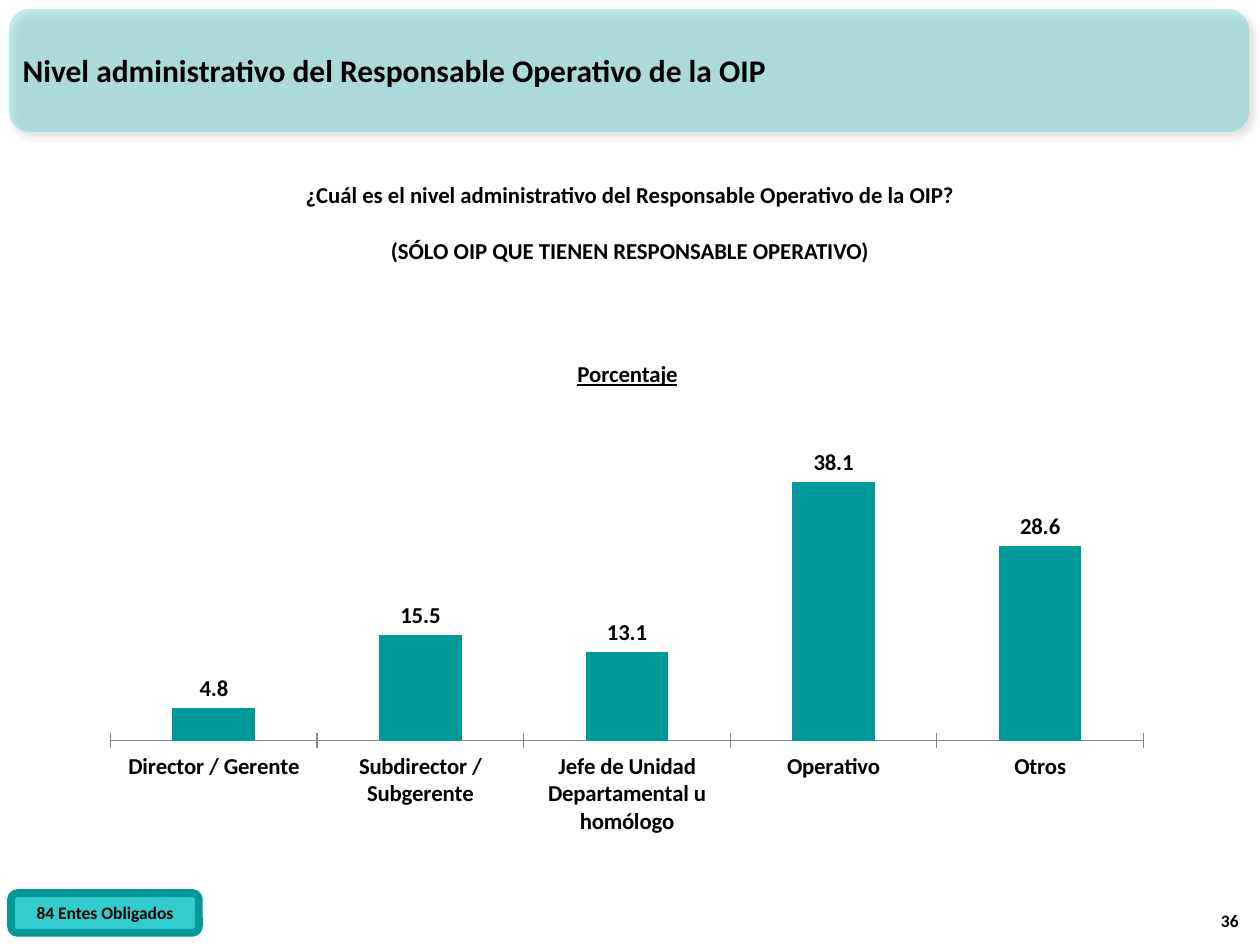
import pptx
import pptx.chart.data
import pptx.dml.color
import pptx.enum.chart
import pptx.enum.shapes
import pptx.enum.text
import pptx.oxml
import pptx.oxml.ns
import pptx.util

RGBColor = pptx.dml.color.RGBColor
PP_ALIGN = pptx.enum.text.PP_ALIGN
MSO_ANCHOR = pptx.enum.text.MSO_ANCHOR
Pt = pptx.util.Pt

BLACK = RGBColor(0x00, 0x00, 0x00)
TEAL = RGBColor(0x00, 0x99, 0x99)
TURQUOISE = RGBColor(0x33, 0xCC, 0xCC)
GRAY = RGBColor(0x86, 0x86, 0x86)
FONT = "Calibri"
PX_PER_INCH = 126

LEVELS = [
    ("Director / Gerente", 4.8),
    ("Subdirector / Subgerente", 15.5),
    ("Jefe de Unidad Departamental u homólogo", 13.1),
    ("Operativo", 38.1),
    ("Otros", 28.6),
]


def px(*lengths):
    return [round(n * 914400 / PX_PER_INCH) for n in lengths]


def xml(tag, body="", attrs=""):
    prefix = tag.split(":")[0]
    ns = pptx.oxml.ns.nsdecls(*{prefix, "a"})
    return pptx.oxml.parse_xml(f"<{tag} {ns} {attrs}>{body}</{tag}>")


def style_font(font, size):
    font.name = FONT
    font.size = Pt(size)
    font.bold = True
    font.color.rgb = BLACK


def write(sp, lines, size, align, anchor, gap=0):
    tf = sp.text_frame
    tf.word_wrap = True
    tf.auto_size = pptx.enum.text.MSO_AUTO_SIZE.NONE
    tf.vertical_anchor = anchor
    tf.text = "\n".join(lines)
    for i, p in enumerate(tf.paragraphs):
        p.alignment = align
        p.space_before = Pt(gap if i else 0)
        for r in p.runs:
            style_font(r.font, size)


def add_text(s, box, lines, size, align, anchor, gap=0):
    write(s.shapes.add_textbox(*px(*box)), lines, size, align, anchor, gap)


def add_round_box(s, box, color):
    shape = pptx.enum.shapes.MSO_SHAPE.ROUNDED_RECTANGLE
    sp = s.shapes.add_shape(shape, *px(*box))
    sp.shadow.inherit = False
    sp.fill.solid()
    sp.fill.fore_color.rgb = color
    sp.line.fill.background()
    return sp


def add_title(s, text):
    title = s.shapes.title
    title.left, title.top, title.width, title.height = px(10, 11, 1171, 118)
    write(title, [text], 18, PP_ALIGN.LEFT, MSO_ANCHOR.MIDDLE)

    # Translucent panel with a shadow, behind the title
    panel = add_round_box(s, (9, 9, 1240, 123), TURQUOISE)
    spPr = panel._element.spPr
    spPr.find(".//" + pptx.oxml.ns.qn("a:srgbClr")).append(
        xml("a:alpha", attrs='val="30000"'))
    spPr.find(pptx.oxml.ns.qn("a:effectLst")).append(xml(
        "a:outerShdw",
        '<a:srgbClr val="000000"><a:alpha val="40000"/></a:srgbClr>',
        'blurRad="50800" dist="38100" dir="2700000" algn="tl" rotWithShape="0"'))
    title._element.addprevious(panel._element)


def set_layout(element, **parts):
    """Place a chart part by fractions of the chart area."""
    layout = element.get_or_add_layout() if hasattr(
        element, "get_or_add_layout") else element.find(pptx.oxml.ns.qn("c:layout"))
    if layout is None:
        layout = xml("c:layout")
        element.insert(0, layout)
    target = '<c:layoutTarget val="inner"/>' if "w" in parts else ""
    modes = "".join(f'<c:{k}Mode val="edge"/>' for k in "xy")
    values = "".join(f'<c:{k} val="{v}"/>' for k, v in parts.items())
    layout.append(xml("c:manualLayout", target + modes + values))


def add_level_chart(s):
    data = pptx.chart.data.CategoryChartData(number_format="#,##0.0")
    data.categories = [name for name, _ in LEVELS]
    data.add_series("Porcentaje", [value for _, value in LEVELS])
    kind = pptx.enum.chart.XL_CHART_TYPE.COLUMN_CLUSTERED
    chart = s.shapes.add_chart(kind, *px(89, 334, 1076, 515), data).chart
    style_font(chart.font, 13)
    chart.has_legend = False

    # Title
    chart.has_title = True
    tf = chart.chart_title.text_frame
    tf.text = "Porcentaje"
    font = tf.paragraphs[0].runs[0].font
    style_font(font, 13)
    font.underline = True
    chart.chart_title.include_in_layout = False
    set_layout(chart.chart_title._element, x=0.45, y=0.04)

    # Axes
    val = chart.value_axis
    val.minimum_scale, val.maximum_scale, val.major_unit = 0, 50, 10
    val.has_major_gridlines = False
    val.visible = False
    cat = chart.category_axis
    cat.major_tick_mark = pptx.enum.chart.XL_TICK_MARK.CROSS
    cat.format.line.color.rgb = GRAY

    # Columns and labels
    plot = chart.plots[0]
    plot.vary_by_categories = False
    plot.gap_width, plot.overlap = 150, -25
    fill = plot.series[0].format.fill
    fill.solid()
    fill.fore_color.rgb = TEAL
    plot.has_data_labels = True
    labels = plot.data_labels
    labels.show_value = True
    labels.number_format = "#,##0.0"
    labels.number_format_is_linked = False
    labels.position = pptx.enum.chart.XL_LABEL_POSITION.OUTSIDE_END
    style_font(labels.font, 13)
    set_layout(chart._chartSpace.chart.plotArea, x=0.02, y=0.13, w=0.96, h=0.66)


def main():
    prs = pptx.Presentation()
    prs.slide_width, prs.slide_height = px(1260, 945)
    s = prs.slides.add_slide(prs.slide_layouts[5])

    add_title(s, "Nivel administrativo del Responsable Operativo de la OIP")

    # Survey question
    add_text(s, (232, 175, 795, 96),
             ["¿Cuál es el nivel administrativo del Responsable Operativo de la OIP?",
              "(SÓLO OIP QUE TIENEN RESPONSABLE OPERATIVO)"],
             13, PP_ALIGN.CENTER, MSO_ANCHOR.TOP, gap=16)

    add_level_chart(s)

    # Sample size and page number
    badge = add_round_box(s, (11, 893, 188, 40), TURQUOISE)
    badge.line.color.rgb = TEAL
    badge.line.width = Pt(4.33)
    write(badge, ["84 Entes Obligados"], 10, PP_ALIGN.CENTER, MSO_ANCHOR.MIDDLE)
    add_text(s, (1191, 887, 60, 50), ["36"], 10, PP_ALIGN.RIGHT, MSO_ANCHOR.BOTTOM)

    prs.save("out.pptx")


if __name__ == "__main__":
    main()
